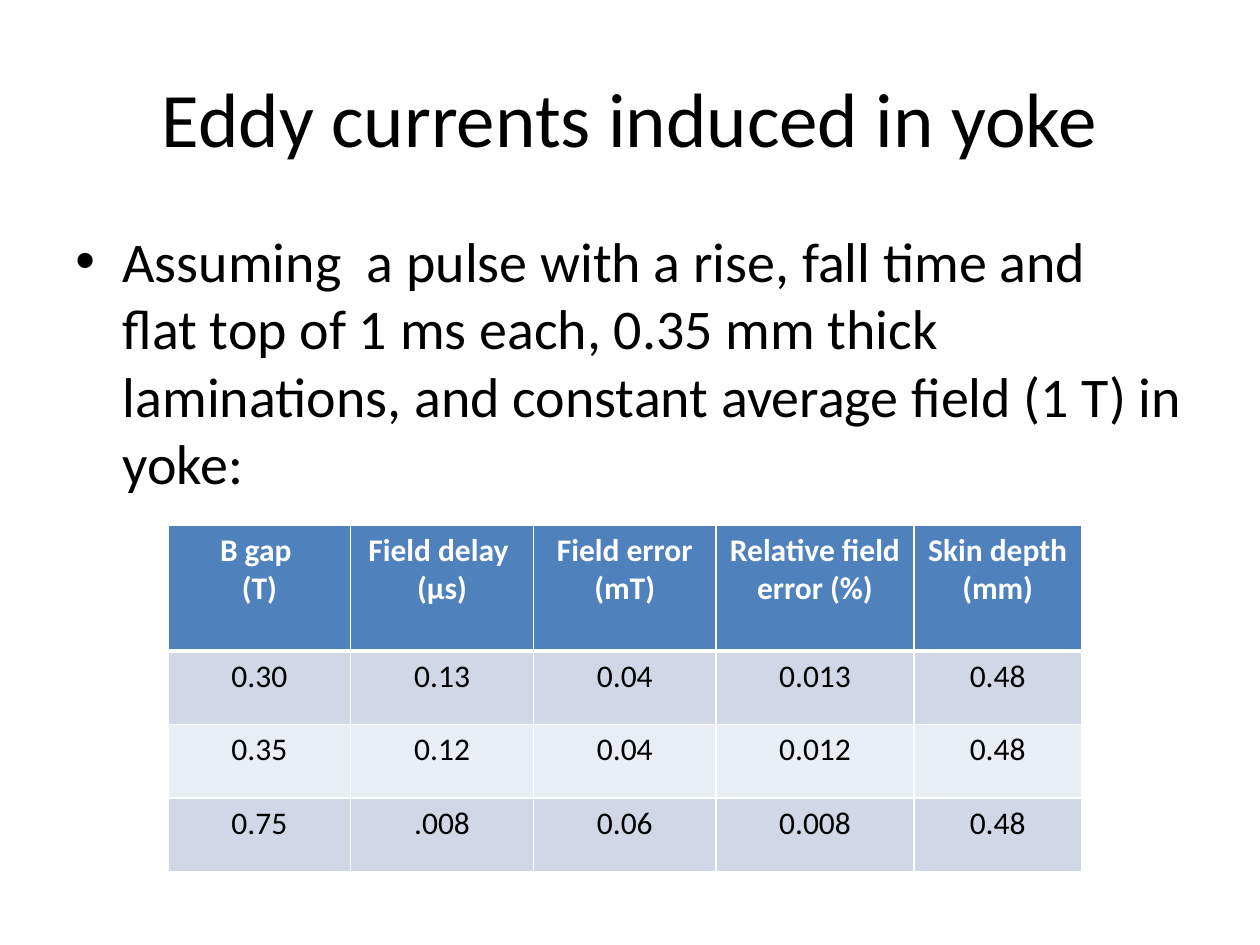
from lxml import etree
from pptx import Presentation
from pptx.dml.color import RGBColor
from pptx.enum.text import MSO_ANCHOR, PP_ALIGN
from pptx.oxml.ns import qn
from pptx.util import Pt

TITLE = "Eddy currents induced in yoke"
BODY = ("Assuming  a pulse with a rise, fall time and  flat top of 1 ms each, "
        "0.35 mm thick laminations, and constant average field (1 T) in yoke:")
ROWS = [
    ("B gap \n(T)", "Field delay  (µs)", "Field error (mT)",
     "Relative field error (%)", "Skin depth (mm)"),
    ("0.30", "0.13", "0.04", "0.013", "0.48"),
    ("0.35", "0.12", "0.04", "0.012", "0.48"),
    ("0.75", ".008", "0.06", "0.008", "0.48"),
]
WIDTHS = (104.4, 104.4, 104.4, 113.04, 95.76)
HEIGHTS = (72, 42, 42, 42)
THEME = {
    "font": "Calibri", "title": 44, "body": 32, "cell": 18,
    "ink": "000000", "light": "FFFFFF", "head": "4F81BD",
    "bands": ("D0D8E8", "E9EDF4"),
}


def style(frame, size, color, align, bold=False):
    for para in frame.paragraphs:
        para.alignment = align
        for run in para.runs:
            font = run.font
            font.name, font.size, font.bold = THEME["font"], Pt(size), bold
            font.color.rgb = RGBColor.from_string(color)


def add_text(slide, text, box, size, align, anchor):
    frame = slide.shapes.add_textbox(*map(Pt, box)).text_frame
    frame.word_wrap = True
    frame.vertical_anchor = anchor
    frame.text = text
    style(frame, size, THEME["ink"], align)
    return frame.paragraphs[0]


def add_bullet(para, indent):
    para.space_before = Pt(0.2 * THEME["body"])
    props = para._p.get_or_add_pPr()
    props.set("marL", str(Pt(indent)))
    props.set("indent", str(-Pt(indent)))
    etree.SubElement(props, qn("a:buFont"), typeface="Arial")
    etree.SubElement(props, qn("a:buChar"), char="•")


def add_borders(cell, top, bottom):
    """Draw the four cell lines, which must precede the fill in the XML."""
    props = cell._tc.get_or_add_tcPr()
    sides = (("L", 1), ("R", 1), ("T", top), ("B", bottom))
    for pos, (side, width) in enumerate(sides):
        line = etree.Element(qn("a:ln" + side), w=str(Pt(width)))
        fill = etree.SubElement(line, qn("a:solidFill"))
        etree.SubElement(fill, qn("a:srgbClr"), val=THEME["light"])
        props.insert(pos, line)


def add_grid(slide, left, top):
    size = Pt(sum(WIDTHS)), Pt(sum(HEIGHTS))
    table = slide.shapes.add_table(
        len(ROWS), len(WIDTHS), Pt(left), Pt(top), *size).table
    for col, width in zip(table.columns, WIDTHS):
        col.width = Pt(width)
    for r, (row, height) in enumerate(zip(ROWS, HEIGHTS)):
        table.rows[r].height = Pt(height)
        head = r == 0
        back = THEME["head"] if head else THEME["bands"][(r - 1) % 2]
        ink = THEME["light"] if head else THEME["ink"]
        for c, text in enumerate(row):
            cell = table.cell(r, c)
            cell.text_frame.text = text
            style(cell.text_frame, THEME["cell"], ink, PP_ALIGN.CENTER, head)
            cell.fill.solid()
            cell.fill.fore_color.rgb = RGBColor.from_string(back)
            add_borders(cell, 3 if r == 1 else 1, 3 if head else 1)


def main():
    deck = Presentation()
    deck.slide_width, deck.slide_height = Pt(720), Pt(540)
    slide = deck.slides.add_slide(deck.slide_layouts[6])
    add_text(slide, TITLE, (36, 21.6, 648, 90), THEME["title"],
             PP_ALIGN.CENTER, MSO_ANCHOR.MIDDLE)
    body = add_text(slide, BODY, (36, 126, 648, 356.4), THEME["body"],
                    PP_ALIGN.LEFT, MSO_ANCHOR.TOP)
    add_bullet(body, 27)
    add_grid(slide, 96, 300)
    deck.save("out.pptx")


if __name__ == "__main__":
    main()
